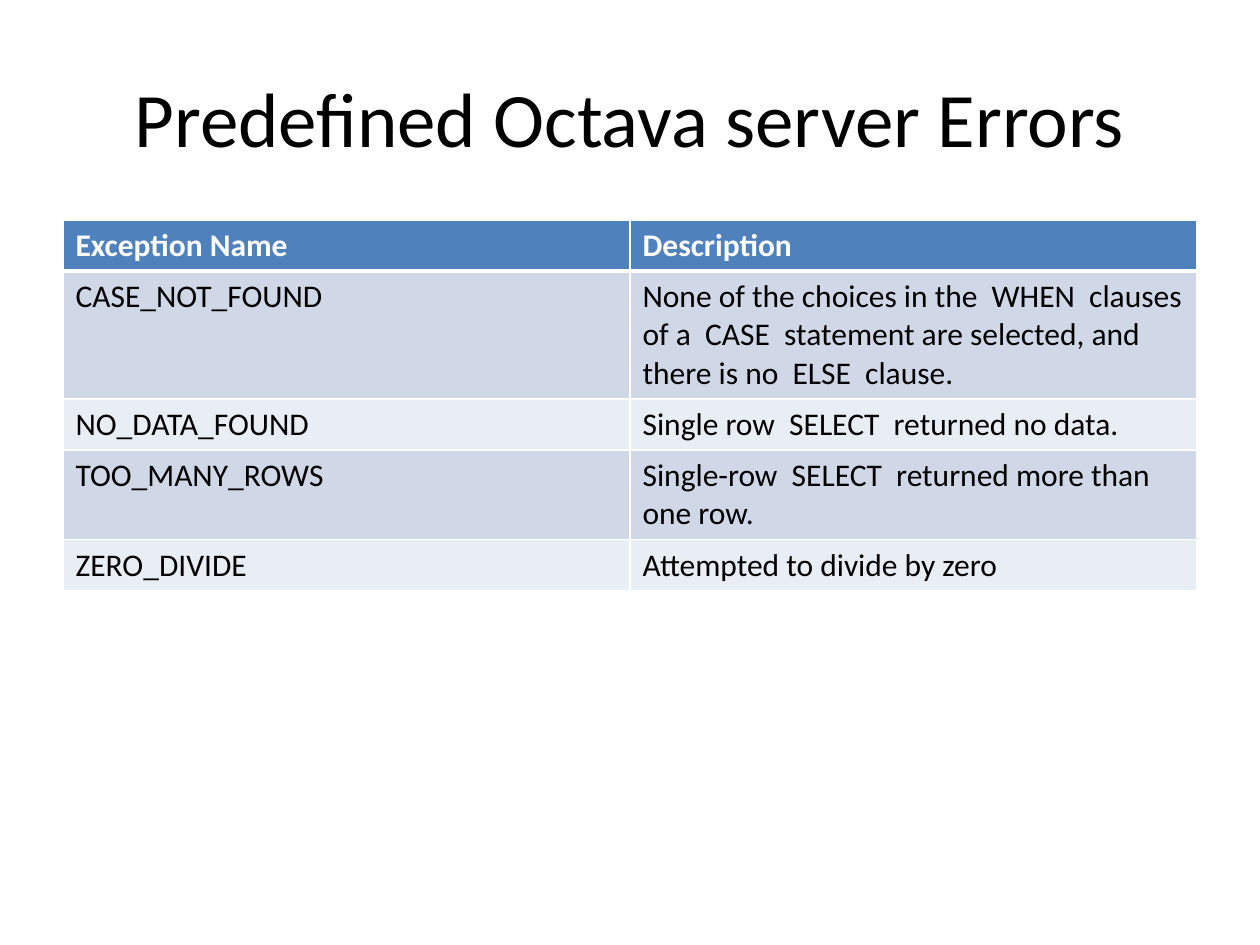
from lxml import etree
from pptx import Presentation
from pptx import util as u
from pptx.dml.color import RGBColor
from pptx.enum import text
from pptx.oxml.ns import qn

PX = 914400 / 126
ROWS = [
    ("Exception Name", "Description"),
    ("CASE_NOT_FOUND", "None of the choices in the  WHEN  clauses\n"
                       "of a  CASE  statement are selected, and\n"
                       "there is no  ELSE  clause."),
    ("NO_DATA_FOUND", "Single row  SELECT  returned no data."),
    ("TOO_MANY_ROWS", "Single-row  SELECT  returned more than one row."),
    ("ZERO_DIVIDE", "Attempted to divide by zero"),
]


def px(n):
    return u.Emu(round(n * PX))


def rgb(code):
    return RGBColor.from_string(code)


class Deck:
    """Holds the style and the current slide."""

    font = "Calibri"
    ink, white, head = "000000", "FFFFFF", "4F81BD"
    bands = ("D0D8E8", "E9EDF4")

    def __init__(self, wide, high):
        self.prs = Presentation()
        self.prs.slide_width, self.prs.slide_height = px(wide), px(high)
        self.slide = self.prs.slides.add_slide(self.prs.slide_layouts[5])

    def run(self, para, words, size, color, bold=False):
        run = para.add_run()
        run.text = words
        font = run.font
        font.name, font.size, font.bold = self.font, u.Pt(size), bold
        font.color.rgb = rgb(color)

    def title(self, words, x, y, w, h):
        box = self.slide.shapes.title
        box.left, box.top, box.width, box.height = map(px, (x, y, w, h))
        frame = box.text_frame
        frame.vertical_anchor = text.MSO_ANCHOR.MIDDLE
        para = frame.paragraphs[0]
        para.alignment = text.PP_ALIGN.CENTER
        self.run(para, words, 44, self.ink)

    def edge(self, cell, side, width):
        props = cell._tc.get_or_add_tcPr()
        line = etree.SubElement(props, qn("a:ln" + side), w=str(u.Pt(width)))
        fill = etree.SubElement(line, qn("a:solidFill"))
        etree.SubElement(fill, qn("a:srgbClr"), val=self.white)

    def cell(self, cell, words, row):
        top = row == 0
        thick = {"T": 3 if row == 1 else 1, "B": 3 if top else 1}
        for side in "LRTB":
            self.edge(cell, side, thick.get(side, 1))
        cell.fill.solid()
        cell.fill.fore_color.rgb = rgb(self.head if top else self.bands[(row - 1) % 2])
        frame = cell.text_frame
        for i, part in enumerate(words.split("\n")):
            para = frame.add_paragraph() if i else frame.paragraphs[0]
            self.run(para, part, 18, self.white if top else self.ink, top)

    def table(self, rows, x, y, w, high):
        cols = len(rows[0])
        frame = self.slide.shapes.add_table(
            len(rows), cols, px(x), px(y), px(w), px(high * len(rows)))
        grid = frame.table
        for col in grid.columns:
            col.width = px(w / cols)
        for r, row in enumerate(rows):
            grid.rows[r].height = px(high)
            for c, words in enumerate(row):
                self.cell(grid.cell(r, c), words, r)


def main():
    deck = Deck(1260, 945)
    deck.title("Predefined Octava server Errors", 63, 38, 1134, 158)
    deck.table(ROWS, 63, 220, 1134, 51)
    deck.prs.save("out.pptx")


if __name__ == "__main__":
    main()
